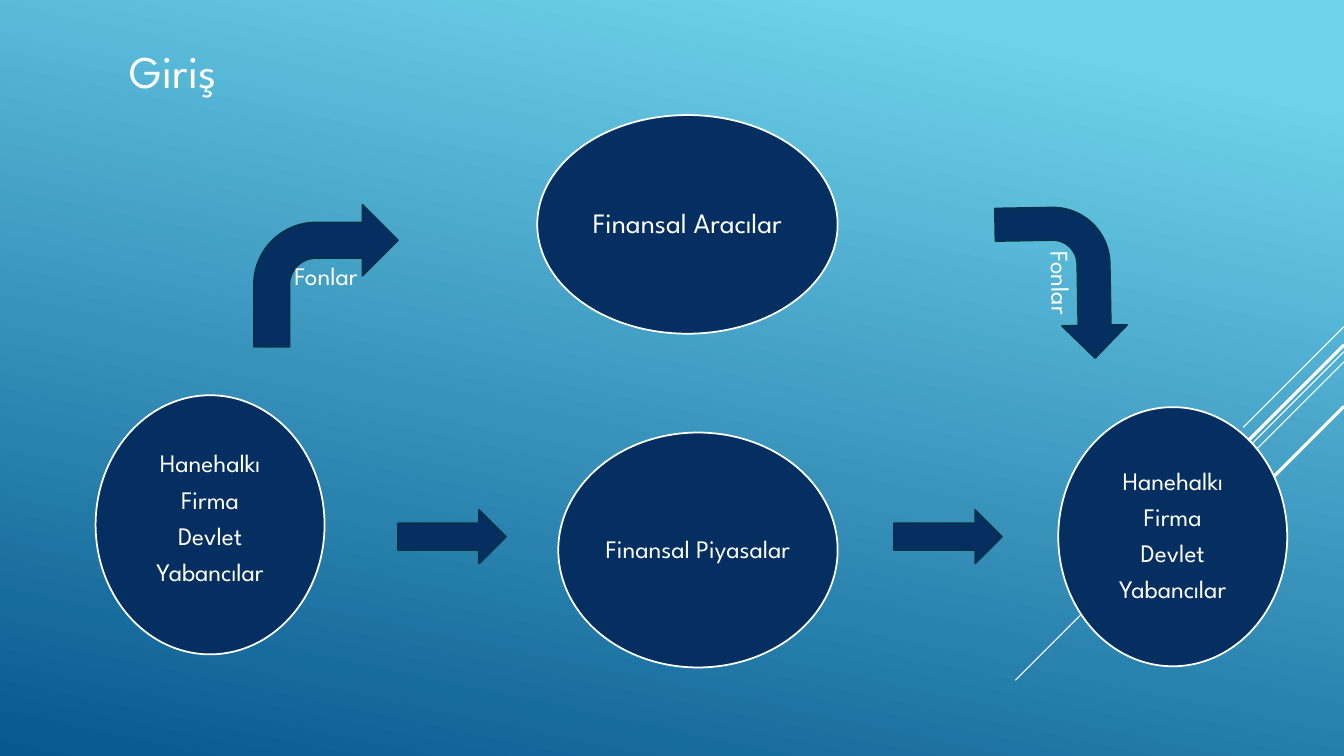
from lxml import etree
from pptx import Presentation
from pptx.dml.color import RGBColor
from pptx.enum.shapes import MSO_CONNECTOR, MSO_SHAPE
from pptx.enum.text import MSO_ANCHOR, MSO_AUTO_SIZE, PP_ALIGN
from pptx.oxml.ns import qn
from pptx.util import Cm, Pt

COLORS = {
    "sky": "6ED2EB",
    "deep": "06588E",
    "navy": "052F61",
    "edge": "043148",
    "white": "FFFFFF",
}
FONT = "League Spartan"
SLIDE_WIDTH = 33.87


def color(name):
    return RGBColor.from_string(COLORS[name])


def add_figure(kind, box, outline, lines, size=18):
    figure = slide.shapes.add_shape(kind, *map(Cm, box))
    figure.shadow.inherit = False
    figure.fill.solid()
    figure.fill.fore_color.rgb = color("navy")
    figure.line.color.rgb = color(outline)
    figure.line.width = Pt(1.25)
    frame = figure.text_frame
    frame.word_wrap = True
    frame.vertical_anchor = MSO_ANCHOR.MIDDLE
    frame.text = "\n".join(lines)
    for paragraph in frame.paragraphs:
        paragraph.alignment = PP_ALIGN.CENTER
        for run in paragraph.runs:
            run.font.name = FONT
            run.font.size = Pt(size)
            run.font.color.rgb = color("white")
    return figure


prs = Presentation()
prs.slide_width = Cm(SLIDE_WIDTH)
prs.slide_height = Cm(19.05)
slide = prs.slides.add_slide(prs.slide_layouts[5])

backdrop = slide.background.fill
backdrop.gradient()
backdrop.gradient_angle = 258
for stop, position, shade in zip(backdrop.gradient_stops, (0.1, 1), ("sky", "deep")):
    stop.position = position
    stop.color.rgb = color(shade)

rays = [
    (8.23, 2.54, 0.75),
    (8.86, 8.28, 0.75),
    (9.12, 5.27, 0.75),
    (8.69, 4.85, 2.25),
    (10.24, 3.53, 2.25),
]
for top, reach, weight in rays:
    ray = slide.shapes.add_connector(
        MSO_CONNECTOR.STRAIGHT,
        Cm(SLIDE_WIDTH), Cm(top), Cm(SLIDE_WIDTH - reach), Cm(top + reach),
    )
    ray.line.color.rgb = color("white")
    ray.line.width = Pt(weight)
    etree.SubElement(ray._element.spPr, qn("a:effectLst"))

heading = slide.shapes.title
heading.left, heading.top, heading.width, heading.height = map(Cm, (3.02, 1.14, 23.7, 1.45))
heading.text_frame.text = "Giriş"
heading.text_frame.auto_size = MSO_AUTO_SIZE.NONE
heading.text_frame.vertical_anchor = MSO_ANCHOR.BOTTOM
heading_line = heading.text_frame.paragraphs[0]
heading_line.alignment = PP_ALIGN.LEFT
heading_font = heading_line.runs[0].font
heading_font.name = FONT
heading_font.size = Pt(32.4)
heading_font.color.rgb = color("white")

sectors = ["Hanehalkı", "Firma", "Devlet", "Yabancılar"]
parties = [
    ((14.07, 10.9, 7.04, 5.92), ["Finansal Piyasalar"], 18, 0),
    ((13.54, 2.9, 7.57, 5.51), ["Finansal Aracılar"], 20, 0),
    ((26.67, 10.26, 5.77, 6.53), sectors, 18, 0),
    ((2.41, 9.96, 5.77, 6.53), sectors, 18, 0.3),
]
for box, lines, size, lift in parties:
    frame = add_figure(MSO_SHAPE.OVAL, box, "white", lines, size).text_frame
    frame.margin_left = frame.margin_right = frame.margin_top = 0
    frame.margin_bottom = Cm(lift)
    for paragraph in frame.paragraphs:
        paragraph.line_spacing = 0.9
        paragraph.space_after = Pt(size * 0.35)

flows = [
    (MSO_SHAPE.BENT_ARROW, (6.4, 5.16, 3.63, 3.58), ["Fonlar"], 0),
    (MSO_SHAPE.RIGHT_ARROW, (10.03, 12.85, 2.72, 1.35), [], 0),
    (MSO_SHAPE.RIGHT_ARROW, (22.53, 12.85, 2.72, 1.35), [], 0),
    (MSO_SHAPE.BENT_ARROW, (24.84, 5.49, 3.81, 3.28), ["Fonlar"], 89),
]
for kind, box, lines, turn in flows:
    add_figure(kind, box, "edge", lines).rotation = turn

prs.save("out.pptx")
